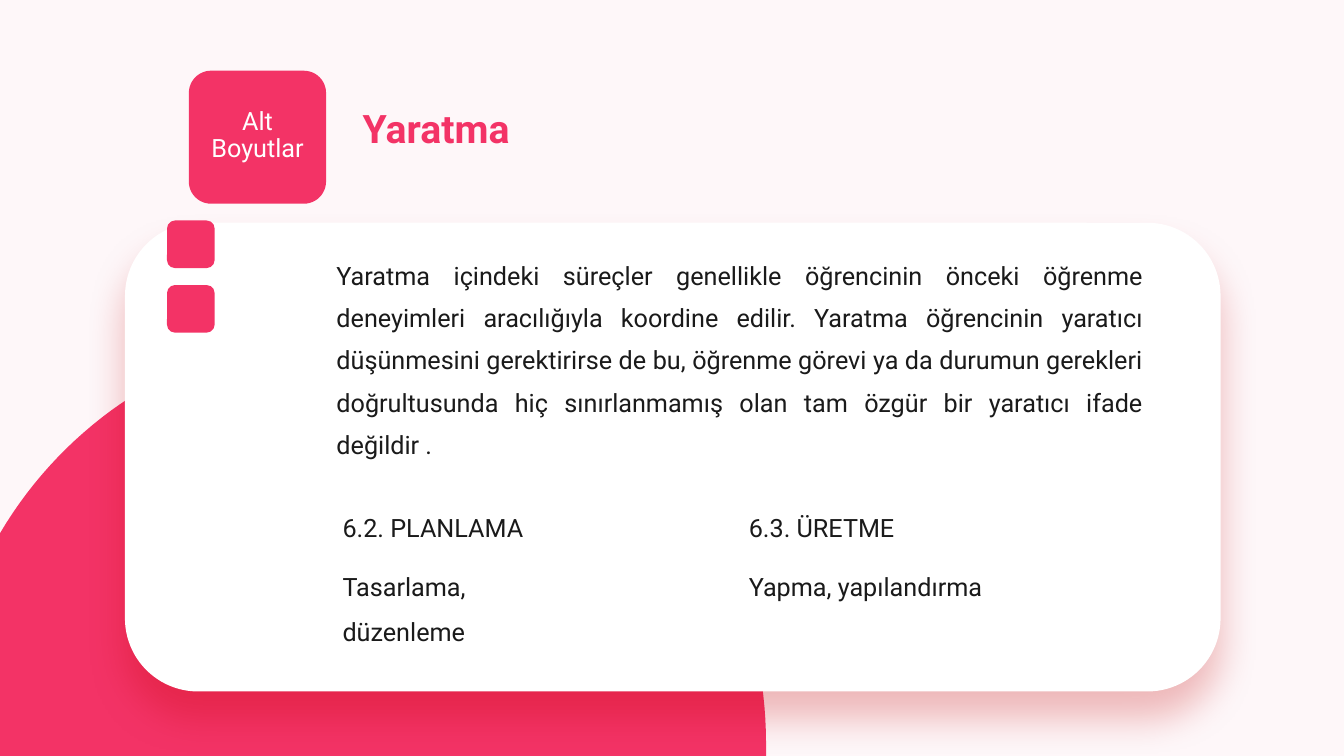
from math import acos, cos, pi, sin

from lxml.etree import SubElement
from pptx import Presentation
from pptx.dml.color import RGBColor as RGB
from pptx.enum.shapes import MSO_SHAPE as SHAPE
from pptx.enum.text import PP_ALIGN as ALIGN
from pptx.oxml.ns import qn
from pptx.util import Pt

COLORS = {"pink": "F33366", "white": "FFFFFF", "ink": "1A1A1A", "glow": "C00000"}
WIDE, HIGH = 960, 540

deck = Presentation()
deck.slide_width, deck.slide_height = Pt(WIDE), Pt(HIGH)
slide = deck.slides.add_slide(deck.slide_layouts[6])
shapes = slide.shapes


def paint(shape, color):
    shape.shadow.inherit = False
    shape.fill.solid()
    shape.fill.fore_color.rgb = RGB.from_string(COLORS[color])
    shape.line.fill.background()
    return shape


def write(text, box, size=18, color="ink", bold=False, align=ALIGN.JUSTIFY,
          lead=1.5, before=10):
    frame = shapes.add_textbox(*map(Pt, box)).text_frame
    frame.word_wrap = True
    frame.text = text
    for para in frame.paragraphs:
        para.alignment = align
        para.line_spacing = lead
        para.space_before = Pt(before)
        font = para.runs[0].font
        font.name, font.size, font.bold = "Roboto", Pt(size), bold
        font.color.rgb = RGB.from_string(COLORS[color])


# Pale pink backdrop
tint = paint(shapes.add_shape(SHAPE.RECTANGLE, 0, 0, Pt(WIDE), Pt(HIGH)), "pink")
fill = tint.fill._xPr.find(qn("a:solidFill"))
SubElement(fill[0], qn("a:alpha"), val="4000")

# Large circle, cut by the left and bottom edges
mid_x, mid_y, rad = 253.2, 530.4, 294
start, steps = acos(-mid_x / rad), 90
arc = []
for i in range(steps + 1):
    turn = start * (1 - i / steps)
    arc.append((mid_x + rad * cos(turn), mid_y - rad * sin(turn)))
path = shapes.build_freeform(0, Pt(HIGH), scale=1.0)
path.add_line_segments([(Pt(x), Pt(y)) for x, y in arc + [(mid_x + rad, HIGH)]])
paint(path.convert_to_shape(), "pink")

# White card with a soft red shadow
card = paint(shapes.add_shape(SHAPE.ROUNDED_RECTANGLE, Pt(89.3), Pt(159.1),
                              Pt(782.6), Pt(334.8)), "white")
card.adjustments[0] = 0.156
glow = SubElement(card._element.spPr.find(qn("a:effectLst")), qn("a:outerShdw"),
                  blurRad=str(Pt(28)), dist=str(Pt(19)), dir="5400000",
                  algn="t", rotWithShape="0")
shade = SubElement(glow, qn("a:srgbClr"), val=COLORS["glow"])
SubElement(shade, qn("a:alpha"), val="26000")

# Pink tiles
for box in [(134.9, 50.5, 98, 95), (119.3, 157.5, 34, 34), (119.3, 203.6, 34, 34)]:
    paint(shapes.add_shape(SHAPE.ROUNDED_RECTANGLE, *map(Pt, box)), "pink")

# Heading and label
write("Yaratma", (252, 74.9, 618.5, 65.5), size=28, color="pink", bold=True,
      align=ALIGN.LEFT, lead=0.9, before=0)
write("Alt Boyutlar", (133.2, 74.2, 101.5, 33), color="white",
      align=ALIGN.CENTER, lead=0.9, before=0)

# Card text
write("Yaratma içindeki süreçler genellikle öğrencinin önceki öğrenme deneyimleri "
      "aracılığıyla koordine edilir. Yaratma öğrencinin yaratıcı düşünmesini "
      "gerektirirse de bu, öğrenme görevi ya da durumun gerekleri doğrultusunda "
      "hiç sınırlanmamış olan tam özgür bir yaratıcı ifade değildir .",
      (233.3, 173.5, 590.4, 161.3), lead=1.4)
write("6.2. PLANLAMA\nTasarlama, düzenleme", (237.6, 351.4, 191, 95))
write("6.3. ÜRETME\nYapma, yapılandırma", (527.8, 351.4, 213, 85.7))

deck.save("out.pptx")
